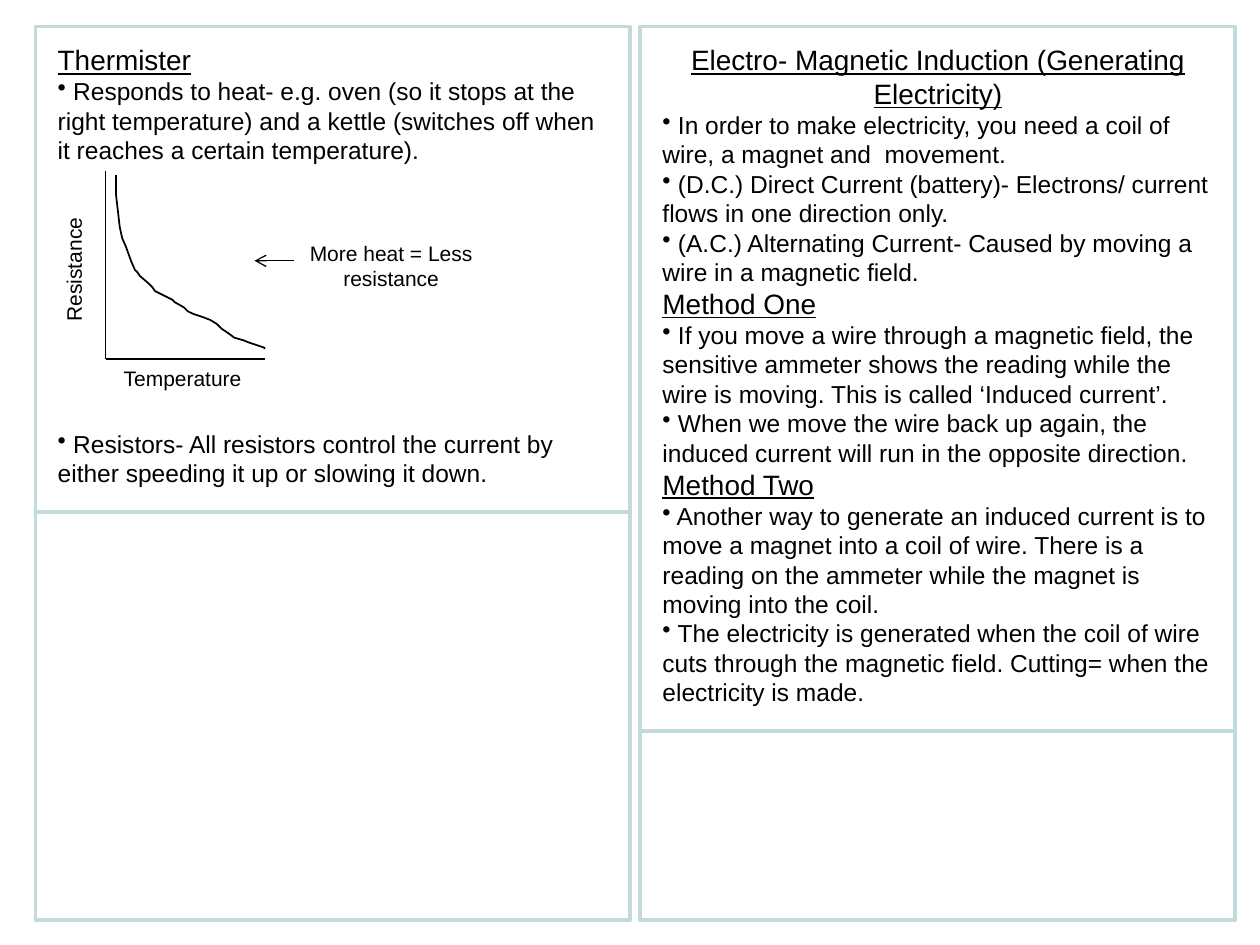
from lxml.etree import SubElement
from pptx import Presentation
from pptx.dml.color import RGBColor
from pptx.enum.shapes import MSO_CONNECTOR as Connector, MSO_SHAPE as Shape
from pptx.enum.text import MSO_AUTO_SIZE as AutoSize, PP_ALIGN as Align
from pptx.oxml.ns import qn
from pptx.util import Pt

PX = 9144  # 100 px to the inch
FRAME, INK = "C3DADB", "000000"
PANEL_WIDTH, PANEL_HEIGHT = 472, 709
HEAD, BULLET = "head", "bullet"

THERMISTOR_NOTES = [
    (HEAD, "Thermister"),
    (BULLET, " Responds to heat- e.g. oven (so it stops at the right temperature) and a kettle "
             "(switches off when it reaches a certain temperature)."),
    (BULLET, " Resistors- All resistors control the current by either speeding it up or slowing it down."),
]
INDUCTION_NOTES = [
    (HEAD, "Electro- Magnetic Induction (Generating Electricity)"),
    (BULLET, " In order to make electricity, you need a coil of wire, a magnet and  movement."),
    (BULLET, " (D.C.) Direct Current (battery)- Electrons/ current flows in one direction only."),
    (BULLET, " (A.C.) Alternating Current- Caused by moving a wire in a magnetic field."),
    (HEAD, "Method One"),
    (BULLET, " If you move a wire through a magnetic field, the sensitive ammeter shows the reading "
             "while the wire is moving. This is called ‘Induced current’."),
    (BULLET, " When we move the wire back up again, the induced current will run in the opposite direction."),
    (HEAD, "Method Two"),
    (BULLET, " Another way to generate an induced current is to move a magnet into a coil of wire. "
             "There is a reading on the ammeter while the magnet is moving into the coil."),
    (BULLET, " The electricity is generated when the coil of wire cuts through the magnetic field. "
             "Cutting= when the electricity is made."),
]
# Resistance curve, relative to the top of the vertical axis
CURVE = [(8, 3), (8, 18), (10, 35), (11, 44), (13, 53), (16, 60), (20, 71), (23, 78), (25, 80),
         (27, 83), (34, 89), (37, 92), (39, 95), (47, 99), (53, 102), (55, 104), (62, 108),
         (65, 111), (69, 113), (78, 116), (83, 118), (88, 121), (92, 125), (98, 129), (102, 132),
         (109, 134), (114, 136), (117, 137), (126, 140), (126, 141)]


def color(value):
    return RGBColor.from_string(value)


def px(*lengths):
    return [length * PX for length in lengths]


def add_line(page, start, end, hue, weight, arrow=False):
    line = page.shapes.add_connector(Connector.STRAIGHT, *px(*start, *end))
    line.line.color.rgb = color(hue)
    line.line.width = Pt(weight)
    if arrow:
        SubElement(line.line._get_or_add_ln(), qn("a:tailEnd"), type="arrow")
    SubElement(line._element.spPr, qn("a:effectLst"))


def add_text_box(page, box, wrap=True):
    text_box = page.shapes.add_textbox(*px(*box))
    text_box.text_frame.word_wrap = wrap
    text_box.text_frame.auto_size = AutoSize.SHAPE_TO_FIT_TEXT
    return text_box


def style(para, text, size, align=Align.LEFT):
    para.text = text
    para.alignment = align
    para.font.name = "Arial"
    para.font.size = Pt(size)
    para.font.color.rgb = color(INK)


def add_label(page, box, text, wrap=False, rotation=0):
    label = add_text_box(page, box, wrap)
    label.rotation = rotation
    style(label.text_frame.paragraphs[0], text, 12, Align.CENTER)


def add_panel(page, left, top, notes, text_height, divider):
    """Framed column of notes with a rule below; returns its paragraphs."""
    frame = page.shapes.add_shape(Shape.RECTANGLE, *px(left, top, PANEL_WIDTH, PANEL_HEIGHT))
    frame.shadow.inherit = False
    frame.fill.background()
    frame.line.color.rgb = color(FRAME)
    frame.line.width = Pt(2)
    add_line(page, (left, top + divider), (left + PANEL_WIDTH, top + divider), FRAME, 2.25)

    text_frame = add_text_box(page, (left + 8, top + 8, PANEL_WIDTH - 15, text_height)).text_frame
    for index, (kind, text) in enumerate(notes):
        para = text_frame.add_paragraph() if index else text_frame.paragraphs[0]
        style(para, text, 16 if kind == HEAD else 14)
        if kind == HEAD:
            para.font.underline = True
        else:
            SubElement(para._p.get_or_add_pPr(), qn("a:buChar"), char="•")
            # The bullet belongs before the default run properties
            properties = para._p.pPr
            properties.append(properties.find(qn("a:defRPr")))
    return text_frame.paragraphs


def add_graph(page, left, top):
    """Resistance against temperature; left and top mark the top of the vertical axis."""
    width, height = 126, 149
    # Axes
    origin = (left, top + height)
    add_line(page, (left, top), origin, INK, 0.75)
    add_line(page, origin, (left + width, top + height), INK, 0.75)
    # Curve
    points = [(left + x, top + y) for x, y in CURVE]
    builder = page.shapes.build_freeform(*points[0], scale=PX)
    builder.add_line_segments(points[1:], close=False)
    curve = builder.convert_to_shape()
    curve.shadow.inherit = False
    curve.fill.background()
    curve.line.color.rgb = color(INK)
    curve.line.width = Pt(1)
    # Labels and arrow
    add_label(page, (left + 4, top + height, 114, 30), "Temperature")
    add_label(page, (left - 77, top + 63, 103, 30), "Resistance", rotation=270)
    add_label(page, (left + 148, top + 50, 157, 50), "More heat = Less resistance", wrap=True)
    add_line(page, (left + 149, top + 71), (left + 118, top + 71), INK, 0.75, arrow=True)


def main():
    deck = Presentation()
    deck.slide_width, deck.slide_height = px(1000, 750)
    page = deck.slides.add_slide(deck.slide_layouts[6])

    # Right column: induction
    induction = add_panel(page, 508, 21, INDUCTION_NOTES, 565, 559)
    induction[0].alignment = Align.CENTER

    # Left column: thermistor, with room for the graph
    thermistor = add_panel(page, 28, 21, THERMISTOR_NOTES, 367, 385)
    thermistor[-1].space_before = Pt(151)
    add_graph(page, 84, 136)

    deck.save("out.pptx")


if __name__ == "__main__":
    main()
